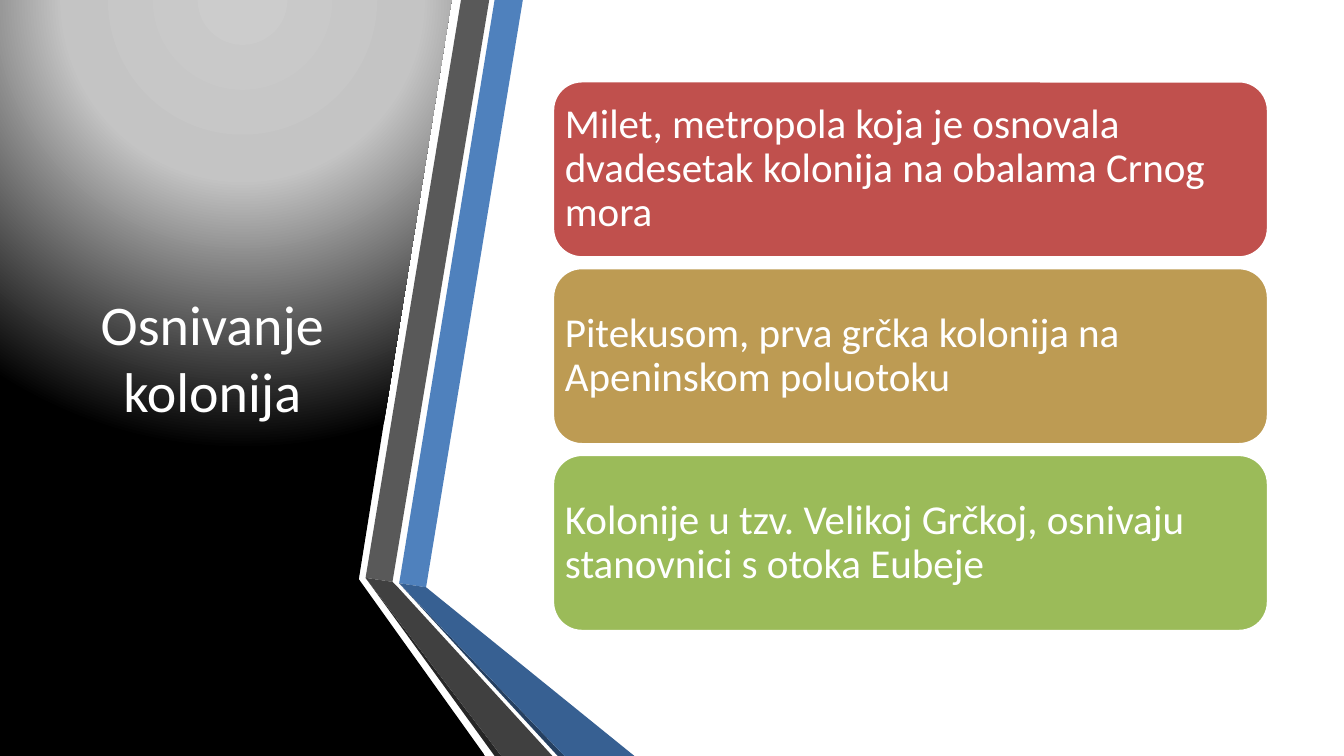
import pptx
import pptx.util
import pptx.dml.color
import pptx.enum.shapes
import pptx.enum.text
import pptx.oxml
import pptx.oxml.ns

Inches, Pt = pptx.util.Inches, pptx.util.Pt
RGBColor = pptx.dml.color.RGBColor

WHITE = RGBColor(0xFF, 0xFF, 0xFF)
BLUE = RGBColor(0x4F, 0x81, 0xBD)
DARK_BLUE = RGBColor(0x37, 0x60, 0x92)
NAVY = RGBColor(0x25, 0x40, 0x61)
GRAY = RGBColor(0x59, 0x59, 0x59)
DARK_GRAY = RGBColor(0x40, 0x40, 0x40)
CHARCOAL = RGBColor(0x26, 0x26, 0x26)
RED = RGBColor(0xC0, 0x50, 0x4D)
GOLD = RGBColor(0xBD, 0x9B, 0x53)
GREEN = RGBColor(0x9B, 0xBB, 0x59)

# Widescreen, 16:9
WIDTH = 10
HEIGHT = WIDTH * 9 / 16

prs = pptx.Presentation()
prs.slide_width, prs.slide_height = Inches(WIDTH), Inches(HEIGHT)
slide = prs.slides.add_slide(prs.slide_layouts[5])
shapes = slide.shapes


def add_polygon(points):
    corners = [(Inches(x), Inches(y)) for x, y in points]
    builder = shapes.build_freeform(*corners[0])
    builder.add_line_segments(corners[1:], close=True)
    polygon = builder.convert_to_shape()
    polygon.shadow.inherit = False
    polygon.line.fill.background()
    return polygon


# Dark panel with a glow from above
panel = add_polygon([(2.64, 0), (3.36, 0), (2.67, 4.31), (3.61, HEIGHT), (0, HEIGHT), (0, 0)])
panel.fill.gradient()
glow = pptx.oxml.parse_xml(
    f'<a:gradFill {pptx.oxml.ns.nsdecls("a")} rotWithShape="1"><a:gsLst>'
    '<a:gs pos="0"><a:srgbClr val="CCCCCC"/></a:gs>'
    '<a:gs pos="40000"><a:srgbClr val="C4C4C4"/></a:gs>'
    '<a:gs pos="100000"><a:srgbClr val="000000"/></a:gs></a:gsLst>'
    '<a:path path="circle"><a:fillToRect l="50000" t="-80000" r="50000" b="180000"/></a:path>'
    '</a:gradFill>')
plain_gradient = panel._element.spPr.find(pptx.oxml.ns.qn("a:gradFill"))
plain_gradient.getparent().replace(plain_gradient, glow)

# Folded ribbons along the panel edge
ribbons = [
    (BLUE, [(2.97, 4.34), (3.17, 4.37), (3.89, 0), (3.68, 0)]),
    (GRAY, [(3.64, 0), (3.43, 0), (2.72, 4.3), (2.92, 4.33)]),
    (CHARCOAL, [(2.72, 4.3), (3.68, HEIGHT), (3.73, HEIGHT)]),
    (NAVY, [(2.97, 4.34), (4.15, HEIGHT), (4.2, HEIGHT)]),
    (DARK_BLUE, [(2.97, 4.34), (4.2, HEIGHT), (4.72, HEIGHT), (3.17, 4.37)]),
    (DARK_GRAY, [(4.11, HEIGHT), (2.96, 4.37), (2.92, 4.33), (2.72, 4.3), (3.73, HEIGHT)]),
]
for color, points in ribbons:
    ribbon = add_polygon(points)
    ribbon.fill.solid()
    ribbon.fill.fore_color.rgb = color

# Title, brought in front of the panel
title = shapes.title
shapes._spTree.append(title._element)
title.left, title.top, title.width, title.height = map(Inches, (0.44, 0.56, 2.28, 4.19))
title.text_frame.text = "Osnivanje kolonija"
title.text_frame.word_wrap = True
title.text_frame.vertical_anchor = pptx.enum.text.MSO_ANCHOR.MIDDLE
heading = title.text_frame.paragraphs[0]
heading.alignment = pptx.enum.text.PP_ALIGN.CENTER
heading.font.name, heading.font.size = "Calibri", Pt(30)
heading.font.color.rgb = WHITE

# Colony cards, evenly spaced
CARD_TOP, CARD_HEIGHT, CARD_GAP = 0.6, 1.32, 0.07
colonies = [
    (RED, "Milet, metropola koja je osnovala dvadesetak kolonija na obalama Crnog mora"),
    (GOLD, "Pitekusom, prva grčka kolonija na Apeninskom poluotoku"),
    (GREEN, "Kolonije u tzv. Velikoj Grčkoj, osnivaju stanovnici s otoka Eubeje"),
]
for row, (color, text) in enumerate(colonies):
    card = shapes.add_shape(
        pptx.enum.shapes.MSO_SHAPE.ROUNDED_RECTANGLE,
        Inches(4.11), Inches(CARD_TOP + row * (CARD_HEIGHT + CARD_GAP)),
        Inches(5.33), Inches(CARD_HEIGHT))
    card.shadow.inherit = False
    card.fill.solid()
    card.fill.fore_color.rgb = color
    card.line.color.rgb = WHITE
    card.line.width = Pt(2)
    frame = card.text_frame
    frame.word_wrap = True
    frame.vertical_anchor = pptx.enum.text.MSO_ANCHOR.MIDDLE
    frame.margin_left = frame.margin_right = Inches(0.03)
    frame.margin_top = frame.margin_bottom = Inches(0.03)
    frame.text = text
    colony = frame.paragraphs[0]
    colony.alignment = pptx.enum.text.PP_ALIGN.LEFT
    colony.line_spacing = 0.9
    colony.font.name, colony.font.size = "Calibri", Pt(22)
    colony.font.color.rgb = WHITE

prs.save("out.pptx")
